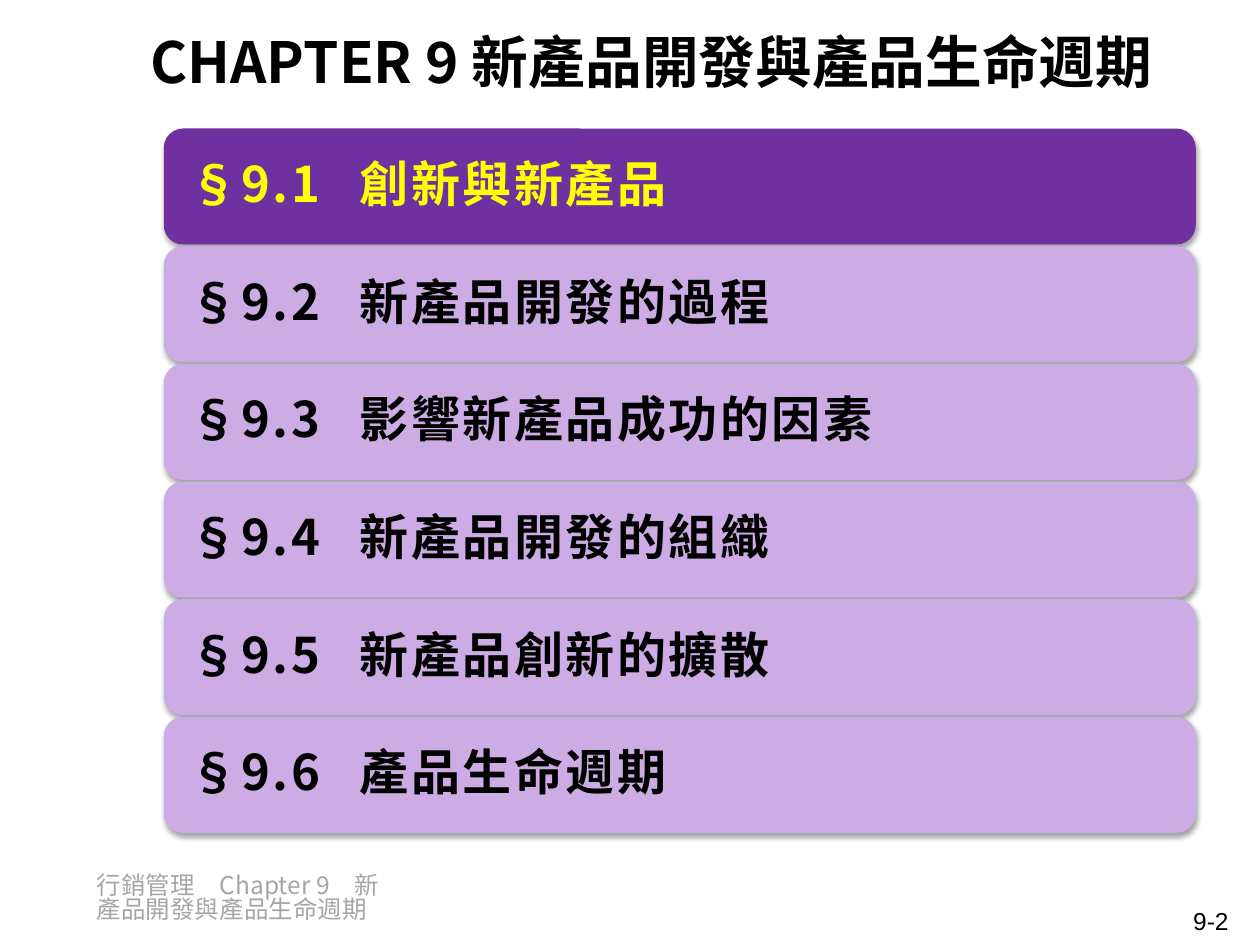
"""Build the chapter outline slide with its first section highlighted."""
from dataclasses import dataclass

import lxml.etree
import pptx
import pptx.dml.color
import pptx.enum.shapes
import pptx.enum.text
import pptx.oxml.ns
import pptx.util

RGBColor = pptx.dml.color.RGBColor
PP_ALIGN = pptx.enum.text.PP_ALIGN
MSO_ANCHOR = pptx.enum.text.MSO_ANCHOR
Inches = pptx.util.Inches
Pt = pptx.util.Pt
qn = pptx.oxml.ns.qn

BLACK = RGBColor(0x00, 0x00, 0x00)
GREY = RGBColor(0xA6, 0xA6, 0xA6)
YELLOW = RGBColor(0xFF, 0xFF, 0x00)
PURPLE = RGBColor(0x70, 0x30, 0xA0)
LILAC = RGBColor(0xCD, 0xAC, 0xE6)

CJK_FONT = "Noto Sans CJK SC"
SLIDE_WIDTH, SLIDE_HEIGHT = 10, 7.5
BAR_LEFT, BAR_WIDTH, BAR_HEIGHT = 1.3, 8.19, 0.92
FIRST_BAR_TOP, LAST_BAR_TOP = 1.02, 5.69
BAR_INSET = 0.16
TITLE_TAB = 1.35


@dataclass(frozen=True)
class Section:
    number: str
    title: str
    fill: RGBColor = LILAC
    color: RGBColor = BLACK


@dataclass(frozen=True)
class Label:
    text: str
    left: float
    top: float
    width: float
    height: float
    size: float
    color: RGBColor = BLACK
    font: str = CJK_FONT
    bold: bool = False
    align: PP_ALIGN = PP_ALIGN.LEFT
    anchor: MSO_ANCHOR = MSO_ANCHOR.TOP
    line_spacing: float = 1.0
    right_inset: float = 0.1


SECTIONS = [
    Section("§9.1", "創新與新產品", PURPLE, YELLOW),
    Section("§9.2", "新產品開發的過程"),
    Section("§9.3", "影響新產品成功的因素"),
    Section("§9.4", "新產品開發的組織"),
    Section("§9.5", "新產品創新的擴散"),
    Section("§9.6", "產品生命週期"),
]

LABELS = [
    Label("CHAPTER 9 新產品開發與產品生命週期", 0.67, 0, 9, 0.96, 32.4, bold=True,
          align=PP_ALIGN.CENTER, anchor=MSO_ANCHOR.MIDDLE),
    Label("行銷管理　Chapter 9　新產品開發與產品生命週期", 0.67, 6.9, 2.44, 0.4, 14,
          color=GREY, line_spacing=0.82, right_inset=0),
    Label("9-2", 7.52, 7.14, 2.33, 0.29, 14, font="Arial", align=PP_ALIGN.RIGHT),
]


def format_runs(paragraph, size: float, color: RGBColor, font: str, bold: bool,
                spacing: float = 0) -> None:
    """Format every run, for Latin and East Asian characters alike."""
    for run in paragraph.runs:
        run.font.size = Pt(size)
        run.font.bold = bold
        run.font.color.rgb = color
        run.font.name = font
        properties = run.font._element
        lxml.etree.SubElement(properties, qn("a:ea")).set("typeface", font)
        if spacing:
            properties.set("spc", str(round(spacing * 100)))


def add_label(slide, label: Label) -> None:
    """Add a wrapped text box."""
    box = slide.shapes.add_textbox(Inches(label.left), Inches(label.top),
                                   Inches(label.width), Inches(label.height))
    frame = box.text_frame
    frame.word_wrap = True
    frame.vertical_anchor = label.anchor
    frame.margin_right = Inches(label.right_inset)
    frame.text = label.text
    paragraph = frame.paragraphs[0]
    paragraph.alignment = label.align
    paragraph.line_spacing = label.line_spacing
    format_runs(paragraph, label.size, label.color, label.font, label.bold)


def add_shadow(shape) -> None:
    """Give a shape a soft shadow straight below it."""
    shape.shadow.inherit = False
    effects = shape._element.spPr.find(qn("a:effectLst"))
    shadow = lxml.etree.SubElement(effects, qn("a:outerShdw"), blurRad=str(Pt(3.1)),
                                   dist=str(Pt(1.8)), dir="5400000", rotWithShape="0")
    color = lxml.etree.SubElement(shadow, qn("a:srgbClr"), val=str(BLACK))
    lxml.etree.SubElement(color, qn("a:alpha"), val="35000")


def add_section(slide, section: Section, top: float) -> None:
    """Add one section bar with its number and title."""
    bar = slide.shapes.add_shape(
        pptx.enum.shapes.MSO_SHAPE.ROUNDED_RECTANGLE,
        Inches(BAR_LEFT), Inches(top), Inches(BAR_WIDTH), Inches(BAR_HEIGHT))
    bar.fill.solid()
    bar.fill.fore_color.rgb = section.fill
    bar.line.fill.background()
    add_shadow(bar)
    frame = bar.text_frame
    frame.word_wrap = True
    frame.vertical_anchor = MSO_ANCHOR.MIDDLE
    frame.margin_left = frame.margin_right = Inches(BAR_INSET)
    frame.text = f"{section.number}\t{section.title}"
    paragraph = frame.paragraphs[0]
    paragraph.alignment = PP_ALIGN.LEFT
    paragraph.line_spacing = 0.9
    tabs = lxml.etree.SubElement(paragraph._p.get_or_add_pPr(), qn("a:tabLst"))
    lxml.etree.SubElement(tabs, qn("a:tab"), pos=str(Inches(TITLE_TAB)), algn="l")
    format_runs(paragraph, 28, section.color, CJK_FONT, True, spacing=1.5)


def main() -> None:
    """Build and save the slide."""
    deck = pptx.Presentation()
    deck.slide_width = Inches(SLIDE_WIDTH)
    deck.slide_height = Inches(SLIDE_HEIGHT)
    slide = deck.slides.add_slide(deck.slide_layouts[6])
    for label in LABELS:
        add_label(slide, label)
    pitch = (LAST_BAR_TOP - FIRST_BAR_TOP) / (len(SECTIONS) - 1)
    for row, section in enumerate(SECTIONS):
        add_section(slide, section, FIRST_BAR_TOP + row * pitch)
    deck.save("out.pptx")


if __name__ == "__main__":
    main()
